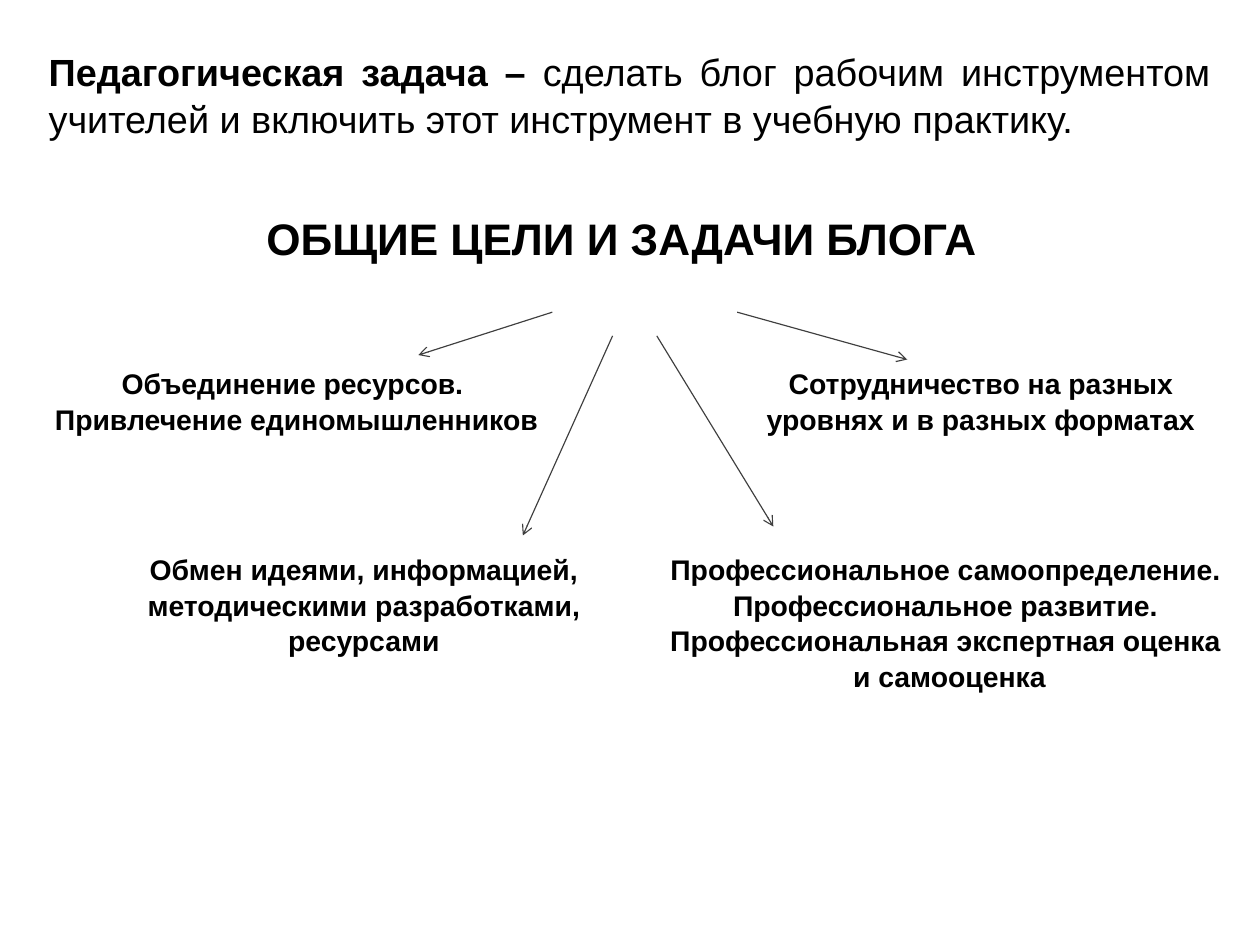
import dataclasses

import lxml.etree
import pptx
import pptx.dml.color
import pptx.enum.shapes
import pptx.enum.text
import pptx.oxml.ns
import pptx.util

Cm = pptx.util.Cm
Align = pptx.enum.text.PP_ALIGN
Anchor = pptx.enum.text.MSO_ANCHOR

FONT = "Arial"
TEXT_COLOUR = "000000"
ARROW_COLOUR = "3F3F3F"
LINE_SPACING = 1.04


@dataclasses.dataclass
class Caption:
    """A text block; lengths in centimetres, one string per paragraph."""
    left: float
    top: float
    width: float
    height: float
    paragraphs: list[str]
    size: int = 18


@dataclasses.dataclass
class Arrow:
    """An arrow from the heading to a goal, in centimetres."""
    start: tuple[float, float]
    end: tuple[float, float]


UPPER_ROW, LOWER_ROW = 8.05, 12.22
OUTER_START, INNER_START = 6.99, 7.52

CAPTIONS = [
    Caption(4.11, 4.57, 19.61, 1.45, ["ОБЩИЕ ЦЕЛИ И ЗАДАЧИ БЛОГА"], 28),
    Caption(0, UPPER_ROW, 13.28, 1.8,
            ["Объединение ресурсов. ", "Привлечение единомышленников"]),
    Caption(16.51, UPPER_ROW, 10.92, 1.8,
            ["Сотрудничество на разных уровнях и в разных форматах"]),
    Caption(14.71, LOWER_ROW, 13.11, 3.33,
            ["Профессиональное самоопределение. ",
             "Профессиональное развитие. ",
             "Профессиональная экспертная оценка ",
             "и самооценка"]),
    Caption(3.02, LOWER_ROW, 10.26, 2.57,
            ["Обмен идеями, информацией, ",
             "методическими разработками, ресурсами"]),
]

ARROWS = [
    Arrow((16.51, OUTER_START), (20.32, 8.05)),
    Arrow((14.71, INNER_START), (17.32, 11.79)),
    Arrow((13.72, INNER_START), (11.71, 11.99)),
    Arrow((12.37, OUTER_START), (9.37, 7.95)),
]


def rgb(colour: str) -> pptx.dml.color.RGBColor:
    return pptx.dml.color.RGBColor.from_string(colour)


def format_run(run, size: int, bold: bool) -> None:
    run.font.name = FONT
    run.font.size = pptx.util.Pt(size)
    run.font.bold = bold
    run.font.color.rgb = rgb(TEXT_COLOUR)


def add_text_frame(slide, left: float, top: float, width: float, height: float):
    frame = slide.shapes.add_textbox(
        Cm(left), Cm(top), Cm(width), Cm(height)).text_frame
    frame.word_wrap = True
    return frame


def add_task(slide) -> None:
    """Add the justified statement with its bold lead-in."""
    frame = add_text_frame(slide, 0.84, 0.84, 26.52, 2.54)
    frame.vertical_anchor = Anchor.MIDDLE
    statement = frame.paragraphs[0]
    statement.alignment = Align.JUSTIFY
    statement.line_spacing = LINE_SPACING
    for words, bold in (
        ("Педагогическая задача – ", True),
        ("сделать блог рабочим инструментом учителей "
         "и включить этот инструмент в учебную практику.", False),
    ):
        run = statement.add_run()
        run.text = words
        format_run(run, 24, bold)


def add_caption(slide, caption: Caption) -> None:
    frame = add_text_frame(
        slide, caption.left, caption.top, caption.width, caption.height)
    frame.text = "\n".join(caption.paragraphs)
    for paragraph in frame.paragraphs:
        paragraph.alignment = Align.CENTER
        paragraph.line_spacing = LINE_SPACING
        for run in paragraph.runs:
            format_run(run, caption.size, True)


def add_arrow(slide, arrow: Arrow) -> None:
    connector = slide.shapes.add_connector(
        pptx.enum.shapes.MSO_CONNECTOR.STRAIGHT,
        *map(Cm, arrow.start + arrow.end))
    connector.line.color.rgb = rgb(ARROW_COLOUR)
    connector.line.width = pptx.util.Pt(0.75)
    qn = pptx.oxml.ns.qn
    properties = connector.element.spPr
    lxml.etree.SubElement(properties.find(qn("a:ln")), qn("a:tailEnd"), type="arrow")
    lxml.etree.SubElement(properties, qn("a:effectLst"))


def main() -> None:
    presentation = pptx.Presentation()
    presentation.slide_width = Cm(28.22)
    presentation.slide_height = Cm(21.16)
    slide = presentation.slides.add_slide(presentation.slide_layouts[6])
    add_task(slide)
    for caption in CAPTIONS:
        add_caption(slide, caption)
    for arrow in ARROWS:
        add_arrow(slide, arrow)
    presentation.save("out.pptx")


if __name__ == "__main__":
    main()
